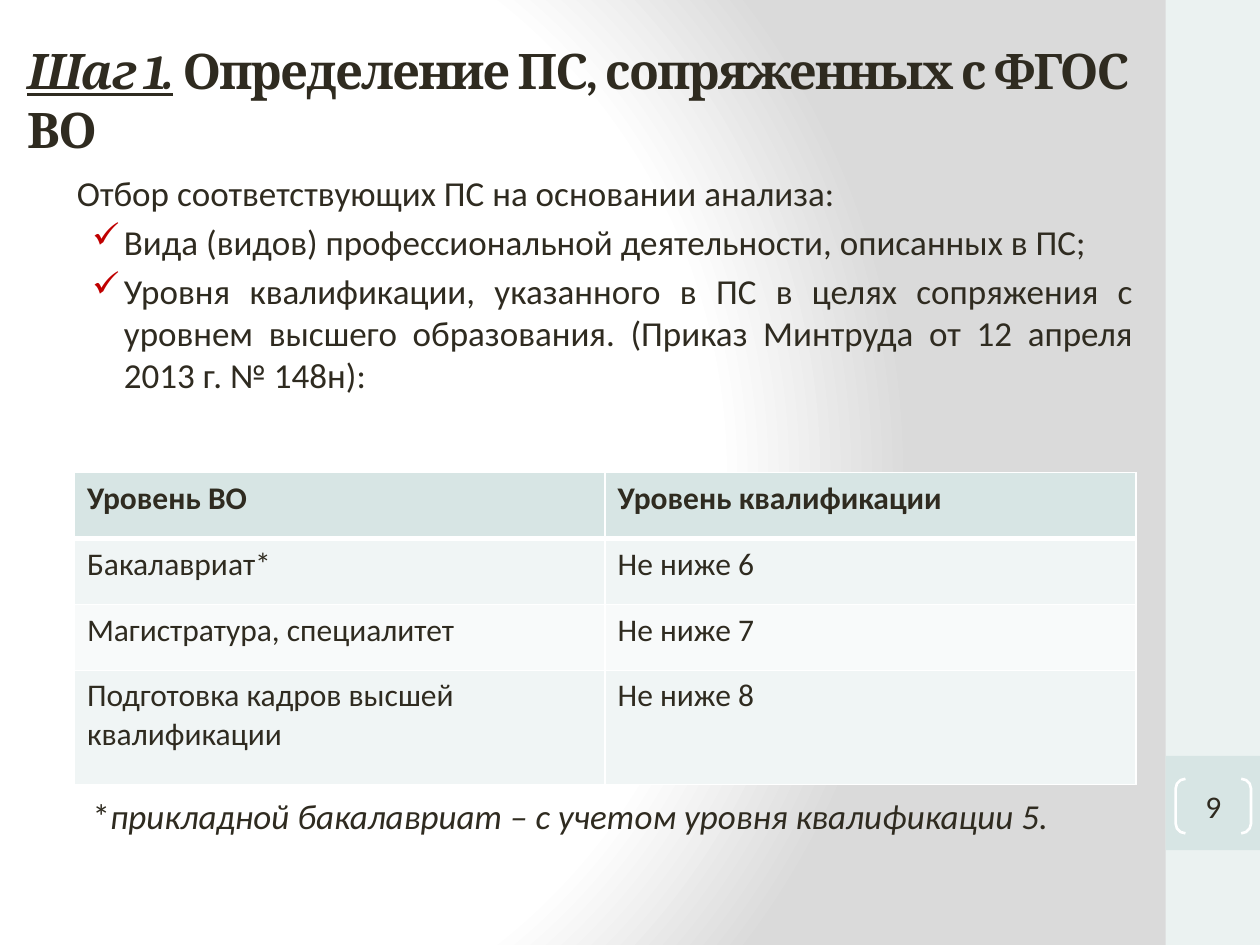
from lxml import etree
from pptx import Presentation
from pptx import oxml
from pptx import util as u
from pptx.dml.color import RGBColor
from pptx.enum import shapes, text
from pptx.oxml import ns

COLORS = {
    "text": "2F2B20", "check": "C00000", "white": "FFFFFF", "shade": "DADADA",
    "sidebar": "EBF2F1", "accent": "D7E5E4", "band_dark": "F0F5F5", "band_light": "F8FAFA",
}


def add_run(paragraph, content, size=20, font="Calibri", bold=False, italic=False,
            underline=False, tracking=0):
    """Append formatted text; tracking is in hundredths of a point."""
    run = paragraph.add_run()
    run.text = content
    run.font.size = u.Pt(size)
    run.font.name = font
    run.font.bold = bold
    run.font.italic = italic
    run.font.underline = underline
    run.font.color.rgb = RGBColor.from_string(COLORS["text"])
    if tracking:
        run.font._element.set("spc", str(tracking))


def add_text_box(left, top, width, height):
    box = slide.shapes.add_textbox(u.Cm(left), u.Cm(top), u.Cm(width), u.Cm(height))
    box.text_frame.word_wrap = True
    return box.text_frame


presentation = Presentation()
presentation.slide_width = u.Cm(25.4)
presentation.slide_height = u.Cm(19.05)
slide = presentation.slides.add_slide(presentation.slide_layouts[6])

# Radial background
slide.background.fill.solid()
solid_fill = slide.element.find(".//" + ns.qn("a:solidFill"))
stops = "".join(
    f'<a:gs pos="{position * 1000}"><a:srgbClr val="{COLORS[color]}"/></a:gs>'
    for position, color in [(0, "white"), (75, "white"), (100, "shade")])
solid_fill.getparent().replace(solid_fill, oxml.parse_xml(
    f'<a:gradFill {ns.nsdecls("a")} rotWithShape="1"><a:gsLst>{stops}</a:gsLst>'
    '<a:path path="circle"><a:fillToRect l="20000" t="50000" r="100000" b="50000"/></a:path>'
    '</a:gradFill>'))

# Sidebar and the block behind the page number
for top, height, color in [(0, 19.05, "sidebar"), (15.24, 1.9, "accent")]:
    panel = slide.shapes.add_shape(
        shapes.MSO_SHAPE.RECTANGLE, u.Cm(23.5), u.Cm(top), u.Cm(1.9), u.Cm(height))
    panel.shadow.inherit = False
    panel.fill.solid()
    panel.fill.fore_color.rgb = RGBColor.from_string(COLORS[color])
    panel.line.fill.background()

# Title
title = add_text_box(0.3, 0.33, 22.8, 3.35)
title.vertical_anchor = text.MSO_ANCHOR.MIDDLE
title_format = dict(size=28, font="Cambria", bold=True, tracking=-100)
add_run(title.paragraphs[0], "Шаг 1.", italic=True, underline=True, **title_format)
add_run(title.paragraphs[0], " Определение ПС, сопряженных с ФГОС ВО", **title_format)

# Introduction with check marks
body = add_text_box(1.3, 3.33, 21.8, 5.5)
add_run(body.paragraphs[0], "Отбор соответствующих ПС на основании анализа:")
for criterion in [
    "Вида (видов) профессиональной деятельности, описанных в ПС;",
    "Уровня квалификации, указанного в ПС в целях сопряжения с уровнем высшего образования. "
    "(Приказ Минтруда от 12 апреля 2013 г. № 148н):",
]:
    paragraph = body.add_paragraph()
    add_run(paragraph, criterion)
    properties = paragraph._p.get_or_add_pPr()
    properties.set("marL", str(u.Cm(0.95)))
    properties.set("indent", str(u.Cm(-0.64)))
    bullet_color = etree.SubElement(properties, ns.qn("a:buClr"))
    etree.SubElement(bullet_color, ns.qn("a:srgbClr"), val=COLORS["check"])
    etree.SubElement(properties, ns.qn("a:buChar"), char="✓")

# Footnote
footnote = add_text_box(1.3, 15.9, 21.8, 1.3)
footnote.paragraphs[0]._p.get_or_add_pPr().set("marL", str(u.Cm(0.32)))
add_run(footnote.paragraphs[0], "*")
add_run(footnote.paragraphs[0], "прикладной бакалавриат – с учетом уровня квалификации 5.",
        italic=True)

for paragraph in [*body.paragraphs, *footnote.paragraphs]:
    paragraph.alignment = text.PP_ALIGN.JUSTIFY
    paragraph.space_before = u.Pt(4)

# Qualification levels
levels = [
    ("Уровень ВО", "Уровень квалификации"),
    ("Бакалавриат*", "Не ниже 6"),
    ("Магистратура, специалитет", "Не ниже 7"),
    ("Подготовка кадров высшей квалификации", "Не ниже 8"),
]
row_fills = ["accent", "band_dark", "band_light", "band_dark"]
row_heights = [1.33, 1.33, 1.33, 2.29]
table = slide.shapes.add_table(
    len(levels), 2, u.Cm(1.5), u.Cm(9.53), u.Cm(21.4), u.Cm(sum(row_heights))).table
for row_index, row_values in enumerate(levels):
    table.rows[row_index].height = u.Cm(row_heights[row_index])
    for column_index, value in enumerate(row_values):
        cell = table.cell(row_index, column_index)
        add_run(cell.text_frame.paragraphs[0], value, size=18, bold=row_index == 0)
        cell_properties = cell._tc.get_or_add_tcPr()
        for side in "LRTB":
            heavy = (row_index, side) in [(0, "B"), (1, "T")]
            border = etree.SubElement(cell_properties, ns.qn(f"a:ln{side}"),
                                      w=str(u.Pt(3 if heavy else 1)))
            border_fill = etree.SubElement(border, ns.qn("a:solidFill"))
            etree.SubElement(border_fill, ns.qn("a:srgbClr"), val=COLORS["white"])
        cell.fill.solid()
        cell.fill.fore_color.rgb = RGBColor.from_string(COLORS[row_fills[row_index]])

# Page number in brackets
page_number = slide.shapes.add_shape(
    shapes.MSO_SHAPE.DOUBLE_BRACKET, u.Cm(23.7), u.Cm(15.7), u.Cm(1.52), u.Cm(1.1))
page_number.adjustments[0] = 0.18
page_number.shadow.inherit = False
page_number.fill.background()
page_number.line.color.rgb = RGBColor.from_string(COLORS["white"])
page_number.line.width = u.Pt(1.5)
frame = page_number.text_frame
frame.margin_left = frame.margin_right = frame.margin_top = frame.margin_bottom = 0
frame.vertical_anchor = text.MSO_ANCHOR.MIDDLE
frame.paragraphs[0].alignment = text.PP_ALIGN.CENTER
add_run(frame.paragraphs[0], "9", size=18)

presentation.save("out.pptx")
